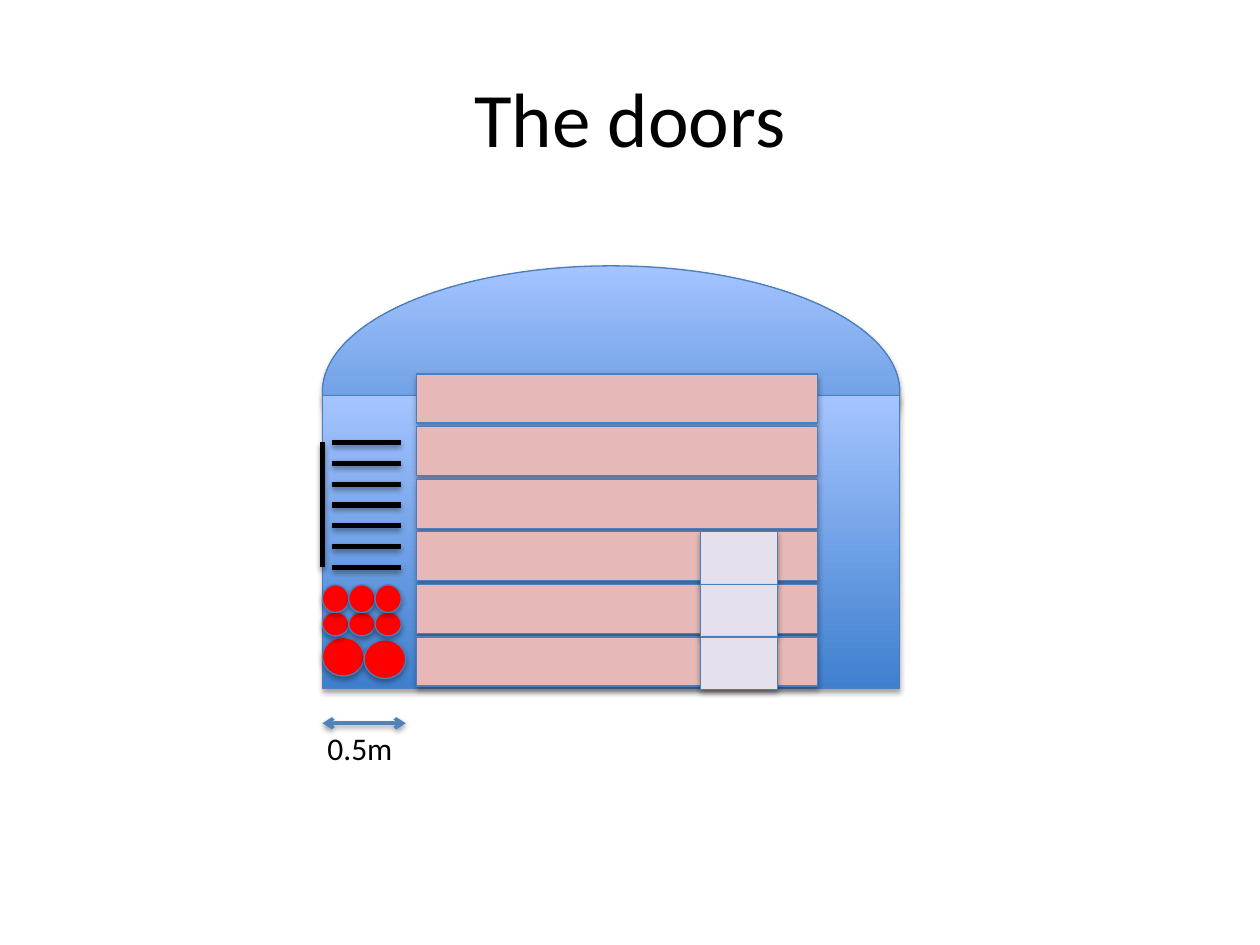
import pptx
import pptx.dml.color
import pptx.enum.shapes
import pptx.enum.text
import pptx.oxml
import pptx.oxml.ns
import pptx.util
from lxml import etree

Cm = pptx.util.Cm
Pt = pptx.util.Pt
RGBColor = pptx.dml.color.RGBColor
SHAPE = pptx.enum.shapes.MSO_SHAPE
ALIGN = pptx.enum.text.PP_ALIGN
ANCHOR = pptx.enum.text.MSO_ANCHOR
FIT = pptx.enum.text.MSO_AUTO_SIZE
qn = pptx.oxml.ns.qn

BLACK = RGBColor(0x00, 0x00, 0x00)
OUTLINE = RGBColor(0x4B, 0x7E, 0xBC)
ARROW = RGBColor(0x4F, 0x81, 0xBD)
WALL = (RGBColor(0x3F, 0x80, 0xCE), RGBColor(0xA4, 0xC4, 0xFF))
PLANK = RGBColor(0xE6, 0xB9, 0xB8)
PANE = RGBColor(0xE6, 0xE0, 0xEC)
RED = RGBColor(0xFF, 0x00, 0x00)
FONT = "Calibri"

TITLE = "The doors"
WIDTH_LABEL = "0.5m"
LEFT = 6.5
BUILDING = [(SHAPE.OVAL, 5.36, 5.08), (SHAPE.RECTANGLE, 7.98, 5.89)]
PLANKS, PANES, SLATS = 6, 3, 7
PLANK_TOP, PLANK_PITCH = 7.54, 1.06
SLAT_TOP, SLAT_PITCH = 8.92, 0.42
LARGE_BALLS = [(LEFT, 12.85), (7.34, 12.9)]
SMALL_BALL_ROWS = [(12.34, 0.48), (11.79, 0.56)]
BALL_PITCH = 0.53


def add_shadow(effects, distance, opacity):
    shadow = etree.SubElement(effects, qn("a:outerShdw"), blurRad="40000",
                              dist=str(distance), dir="5400000", rotWithShape="0")
    color = etree.SubElement(shadow, qn("a:srgbClr"), val="000000")
    etree.SubElement(color, qn("a:alpha"), val=str(opacity * 1000))


def add_block(page, kind, left, top, width, height, color):
    shape = page.shapes.add_shape(kind, Cm(left), Cm(top), Cm(width), Cm(height))
    if isinstance(color, RGBColor):
        shape.fill.solid()
        shape.fill.fore_color.rgb = color
    else:
        shape.fill.gradient()
        shape.fill.gradient_angle = 90
        for stop, shade, position in zip(shape.fill.gradient_stops, color, (0, 1)):
            stop.color.rgb = shade
            stop.position = position
    shape.line.color.rgb = OUTLINE
    shape.line.width = Pt(0.75)
    shape.shadow.inherit = False
    add_shadow(shape._element.spPr.find(qn("a:effectLst")), 23000, 35)


def add_line(page, start, end, color, width, arrows=False):
    line = page.shapes.add_connector(pptx.enum.shapes.MSO_CONNECTOR.STRAIGHT,
                                     *(Cm(value) for value in start + end))
    line.line.color.rgb = color
    line.line.width = Pt(width)
    if arrows:
        outline = line.line._get_or_add_ln()
        for tag in ("a:headEnd", "a:tailEnd"):
            etree.SubElement(outline, qn(tag), type="arrow")
    add_shadow(etree.SubElement(line._element.spPr, qn("a:effectLst")), 20000, 38)


def add_text(page, text, left, top, width, height, size, align=ALIGN.LEFT,
             anchor=ANCHOR.TOP, fit=FIT.NONE, wrap=True):
    box = page.shapes.add_textbox(Cm(left), Cm(top), Cm(width), Cm(height))
    frame = box.text_frame
    frame.word_wrap = wrap
    frame.auto_size = fit
    frame.vertical_anchor = anchor
    para = frame.paragraphs[0]
    para.alignment = align
    span = para.add_run()
    span.text = text
    span.font.name = FONT
    span.font.size = Pt(size)
    span.font.color.rgb = BLACK


def main():
    deck = pptx.Presentation()
    deck.slide_width, deck.slide_height = Cm(25.4), Cm(19.05)
    page = deck.slides.add_slide(deck.slide_layouts[6])

    add_text(page, TITLE, 1.27, 0.76, 22.86, 3.18, 44,
             align=ALIGN.CENTER, anchor=ANCHOR.MIDDLE)
    for kind, top, height in BUILDING:
        add_block(page, kind, LEFT, top, 11.64, height, WALL)

    plank_tops = [PLANK_TOP + row * PLANK_PITCH for row in range(PLANKS)]
    for top in plank_tops:
        add_block(page, SHAPE.RECTANGLE, 8.4, top, 8.08, 0.99, PLANK)
    for top in plank_tops[-PANES:]:
        add_block(page, SHAPE.RECTANGLE, 14.12, top, 1.55, PLANK_PITCH, PANE)

    for left, top in LARGE_BALLS:
        add_block(page, SHAPE.OVAL, left, top, 0.84, 0.78, RED)
    for top, height in SMALL_BALL_ROWS:
        for column in range(3):
            add_block(page, SHAPE.OVAL, LEFT + column * BALL_PITCH, top,
                      BALL_PITCH, height, RED)

    slat_tops = [SLAT_TOP + row * SLAT_PITCH for row in range(SLATS)]
    add_line(page, (LEFT, slat_tops[0]), (LEFT, slat_tops[-1]), BLACK, 3)
    for top in reversed(slat_tops):
        add_line(page, (6.7, top), (8.08, top), BLACK, 3)

    add_text(page, WIDTH_LABEL, 6.35, 14.58, 1.93, 1.02, 18,
             fit=FIT.SHAPE_TO_FIT_TEXT, wrap=False)
    add_line(page, (LEFT, 14.58), (8.18, 14.58), ARROW, 2, arrows=True)

    deck.save("out.pptx")


if __name__ == "__main__":
    main()
